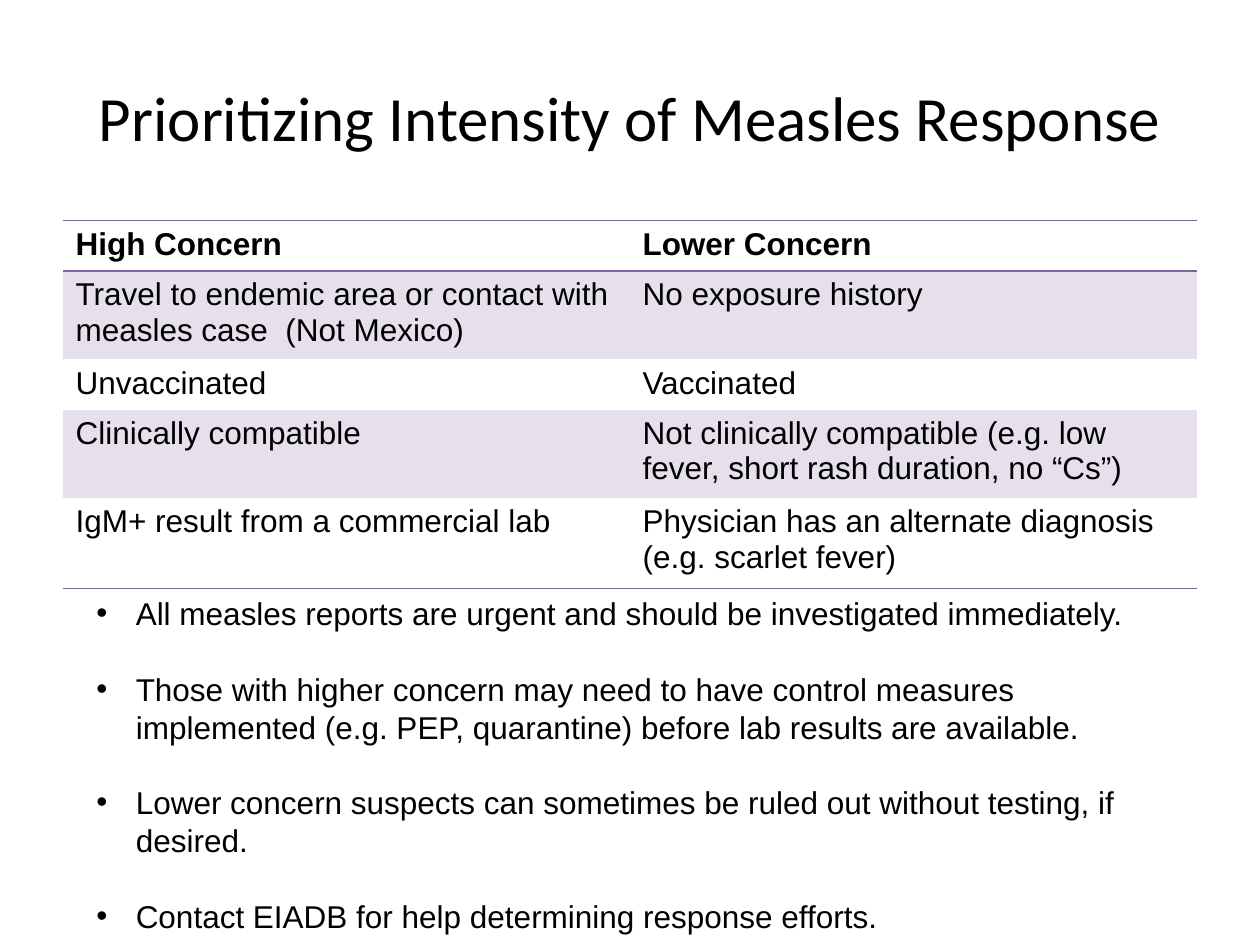
from lxml.etree import SubElement
from pptx import Presentation
from pptx.dml.color import RGBColor
from pptx.enum.text import MSO_ANCHOR as Anchor, PP_ALIGN as Align
from pptx.oxml.ns import qn
from pptx.util import Pt

TITLE = "Prioritizing Intensity of Measles Response"
CONCERNS = [
    ("High Concern", "Lower Concern"),
    ("Travel to endemic area or contact with measles case  (Not Mexico)", "No exposure history"),
    ("Unvaccinated", "Vaccinated"),
    ("Clinically compatible",
     "Not clinically compatible (e.g. low fever, short rash duration, no “Cs”)"),
    ("IgM+ result from a commercial lab",
     "Physician has an alternate diagnosis (e.g. scarlet fever)"),
]
ROW_HEIGHTS = [27.4, 47.2, 27.4, 47.2, 51.8]
GUIDANCE = [
    "All measles reports are urgent and should be investigated immediately.",
    "Those with higher concern may need to have control measures implemented "
    "(e.g. PEP, quarantine) before lab results are available.",
    "Lower concern suspects can sometimes be ruled out without testing, if desired.",
    "Contact EIADB for help determining response efforts.",
]

BLACK = RGBColor(0x00, 0x00, 0x00)
PURPLE = RGBColor(0x80, 0x64, 0xA2)
LAVENDER = RGBColor(0xE6, 0xE0, 0xEC)
NO_STYLE = "{2D5ABB26-0587-4C30-8999-92F81FD0307C}"

TITLE_FONT = {"name": "Calibri", "size": Pt(36), "bold": False}
BODY_FONT = {"name": "Arial", "size": Pt(18), "bold": False}
HEADER_FONT = {**BODY_FONT, "bold": True}
LINE_PITCH = Pt(21.6)
GUIDANCE_FORMAT = {"line_spacing": LINE_PITCH, "space_after": LINE_PITCH}
BULLET_INDENT = Pt(22.5)


def apply(target, values):
    for key, value in values.items():
        setattr(target, key, value)


def write(paragraph, text, font):
    run = paragraph.add_run()
    run.text = text
    apply(run.font, font)
    run.font.color.rgb = BLACK


def add_frame(slide, left, top, width, height, **values):
    frame = slide.shapes.add_textbox(Pt(left), Pt(top), Pt(width), Pt(height)).text_frame
    apply(frame, {"word_wrap": True, **values})
    return frame


def add_borders(cell, sides):
    properties = cell._tc.get_or_add_tcPr()
    for position, side in enumerate(sides):
        line = SubElement(properties, qn(f"a:{side}"), w=str(Pt(1)))
        fill = SubElement(line, qn("a:solidFill"))
        SubElement(fill, qn("a:srgbClr"), val=str(PURPLE))
        properties.remove(line)
        properties.insert(position, line)


def add_bullet(paragraph):
    properties = paragraph._p.get_or_add_pPr()
    properties.set("marL", str(BULLET_INDENT))
    properties.set("indent", str(-BULLET_INDENT))
    SubElement(properties, qn("a:buFont"), typeface="Arial")
    SubElement(properties, qn("a:buChar"), char="•")


def add_concerns(slide):
    table = slide.shapes.add_table(
        len(CONCERNS), 2, Pt(36), Pt(126), Pt(648), Pt(sum(ROW_HEIGHTS))).table
    apply(table, {"first_row": True, "horz_banding": False})
    table._tbl.tblPr.find(qn("a:tableStyleId")).text = NO_STYLE
    borders = {0: ("lnT", "lnB"), len(CONCERNS) - 1: ("lnB",)}
    for index, (concerns, height) in enumerate(zip(CONCERNS, ROW_HEIGHTS)):
        table.rows[index].height = Pt(height)
        for column, concern in enumerate(concerns):
            cell = table.cell(index, column)
            if index % 2:
                cell.fill.solid()
                cell.fill.fore_color.rgb = LAVENDER
            else:
                cell.fill.background()
            write(cell.text_frame.paragraphs[0], concern, BODY_FONT if index else HEADER_FONT)
            add_borders(cell, borders.get(index, ()))


def main():
    deck = Presentation()
    apply(deck, {"slide_width": Pt(720), "slide_height": Pt(540)})
    slide = deck.slides.add_slide(deck.slide_layouts[6])

    heading = add_frame(slide, 24, 21.6, 672, 90, vertical_anchor=Anchor.MIDDLE).paragraphs[0]
    heading.alignment = Align.CENTER
    write(heading, TITLE, TITLE_FONT)

    add_concerns(slide)

    guidance = add_frame(slide, 48, 336, 624, 204)
    for index, advice in enumerate(GUIDANCE):
        paragraph = guidance.add_paragraph() if index else guidance.paragraphs[0]
        apply(paragraph, GUIDANCE_FORMAT)
        add_bullet(paragraph)
        write(paragraph, advice, BODY_FONT)

    deck.save("out.pptx")


if __name__ == "__main__":
    main()
